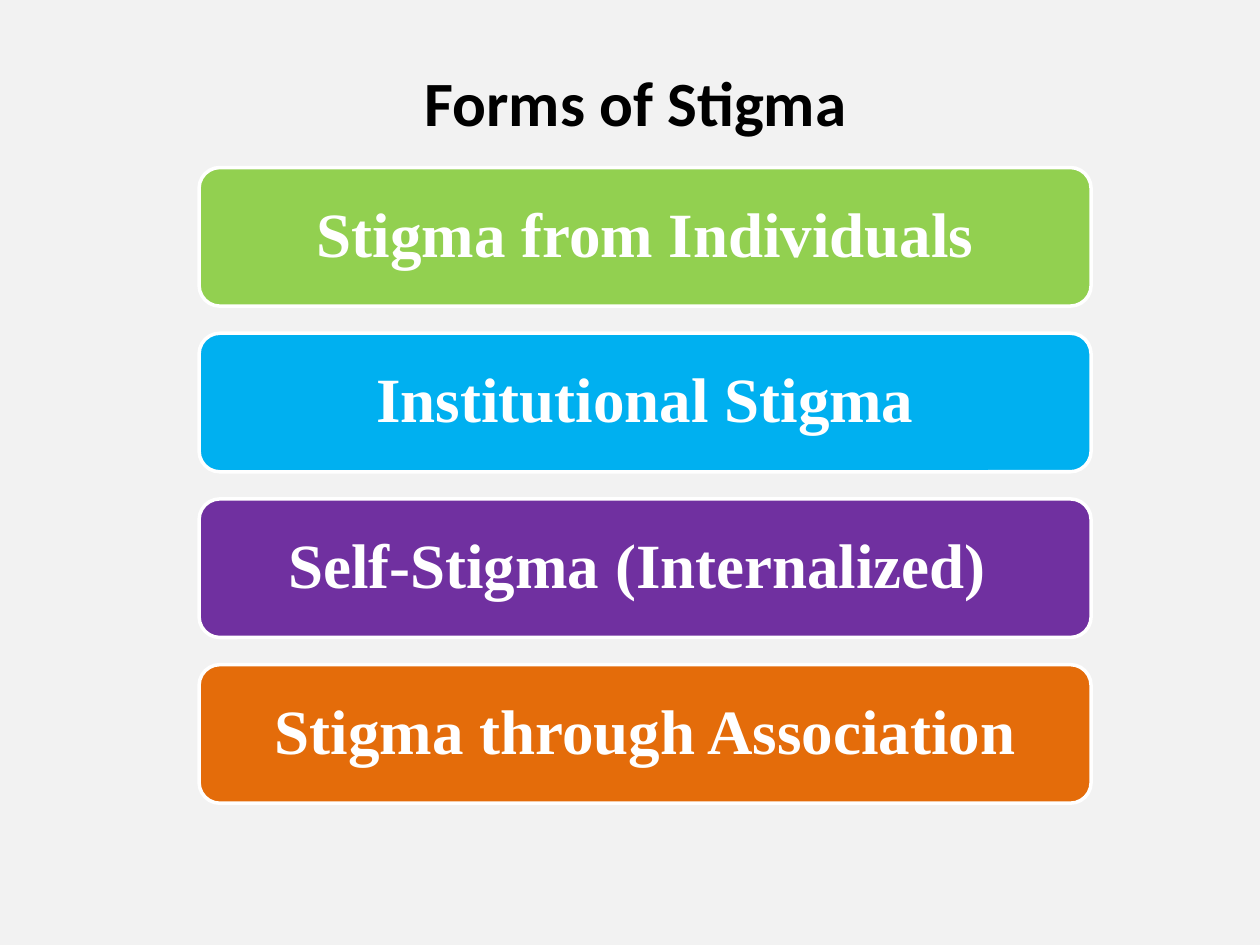
from pptx import Presentation
from pptx import util as u
from pptx.dml import color
from pptx.enum import shapes, text

FORMS = [
    ("Stigma from Individuals", "92D050"),
    ("Institutional Stigma", "00B0F0"),
    ("Self-Stigma (Internalized) ", "7030A0"),
    ("Stigma through Association", "E46C0A"),
]
BAR_TOP, BAR_PITCH = 1.33, 1.315


def paint(target, hex_color):
    """Give a fill a solid colour."""
    target.solid()
    target.fore_color.rgb = color.RGBColor.from_string(hex_color)


class Deck:
    title_font = "Calibri"
    bar_font = "Times New Roman"
    size = 36
    background = "F2F2F2"
    dark, light = "000000", "FFFFFF"

    def __init__(self):
        self.prs = Presentation()
        self.prs.slide_width = u.Inches(10)
        self.prs.slide_height = u.Inches(7.5)
        self.slide = self.prs.slides.add_slide(self.prs.slide_layouts[5])
        paint(self.slide.background.fill, self.background)

    def label(self, shape, words, font, hex_color, inset, anchor):
        frame = shape.text_frame
        frame.word_wrap = True
        frame.auto_size = text.MSO_AUTO_SIZE.NONE
        frame.vertical_anchor = anchor
        frame.margin_left = frame.margin_right = u.Inches(inset)
        frame.margin_top = frame.margin_bottom = u.Inches(inset)
        paragraph = frame.paragraphs[0]
        paragraph.alignment = text.PP_ALIGN.CENTER
        run = paragraph.add_run()
        run.text = words
        run.font.name = font
        run.font.size = u.Pt(self.size)
        run.font.bold = True
        paint(run.font.fill, hex_color)
        return paragraph

    def title(self, words, left, top, width, height):
        title = self.slide.shapes.title
        title.left, title.top = u.Inches(left), u.Inches(top)
        title.width, title.height = u.Inches(width), u.Inches(height)
        self.label(title, words, self.title_font, self.dark, 0.05,
                   text.MSO_ANCHOR.TOP)

    def bar(self, words, fill, left, top, width, height):
        bar = self.slide.shapes.add_shape(
            shapes.MSO_SHAPE.ROUNDED_RECTANGLE,
            u.Inches(left), u.Inches(top), u.Inches(width), u.Inches(height))
        bar.adjustments[0] = 0.15
        bar.shadow.inherit = False
        paint(bar.fill, fill)
        paint(bar.line.fill, self.light)
        bar.line.width = u.Pt(2)
        paragraph = self.label(bar, words, self.bar_font, self.light, 0.24,
                               text.MSO_ANCHOR.MIDDLE)
        paragraph.line_spacing = 0.9


def main():
    deck = Deck()
    deck.title("Forms of Stigma", 0.42, 0.45, 9.25, 0.71)
    for row, (form, fill) in enumerate(FORMS):
        deck.bar(form, fill, 1.58, BAR_TOP + row * BAR_PITCH, 7.08, 1.1)
    deck.prs.save("out.pptx")


if __name__ == "__main__":
    main()
